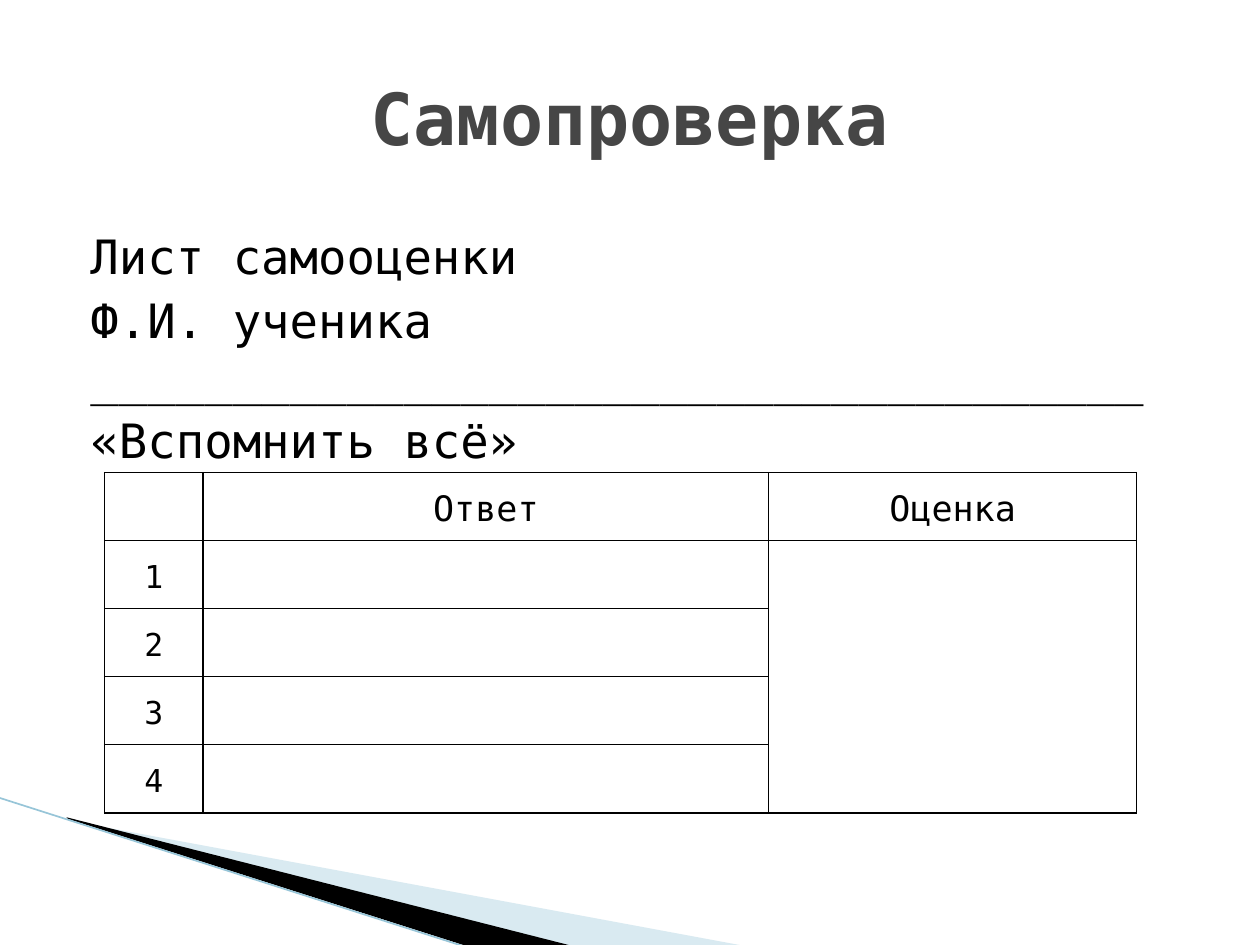
from dataclasses import dataclass
from pptx import Presentation
from pptx.dml.color import RGBColor
from pptx.enum.shapes import MSO_CONNECTOR
from pptx.enum.text import MSO_ANCHOR, PP_ALIGN
from pptx.oxml import parse_xml
from pptx.oxml.ns import nsdecls, qn
from pptx.util import Pt
from lxml.etree import SubElement

# Content
TITLE = "Самопроверка"
LINES = ["Лист самооценки", "Ф.И. ученика " + "_" * 37, "«Вспомнить всё»"]
HEAD = ["", "Ответ", "Оценка"]
TASKS = ["1", "2", "3", "4"]
COLS = [56.2, 323.3, 210.2]
ROW = 38.9

# Corner wedges: points, colour, opacity in percent
WEDGES = [
    ([(39.6, 468.7), (428.4, 540.7), (328.3, 540.7), (39.6, 468)], "pale", 40),
    ([(38.2, 467.3), (329, 540.7), (267.8, 541.4), (38.9, 468)], "ink", 100),
]
EDGE = (-0.7, 455.8, 267.1, 541.4)


@dataclass
class Theme:
    font: str = "DejaVu Sans Mono"
    ink: str = "000000"
    title: str = "464646"
    pale: str = "A0CBDC"
    edge: str = "97C5D8"
    big: int = 41
    body: int = 27
    head: int = 20
    cell: int = 18


T = Theme()


def rgb(name):
    return RGBColor.from_string(getattr(T, name))


def write(frame, lines, size, color="ink", bold=False, align=PP_ALIGN.LEFT,
          anchor=MSO_ANCHOR.TOP, indent=0, before=0, spacing=None):
    frame.word_wrap = True
    frame.vertical_anchor = anchor
    for i, line in enumerate(lines):
        para = frame.paragraphs[0] if i == 0 else frame.add_paragraph()
        para.alignment = align
        if indent:
            props = para._p.get_or_add_pPr()
            props.set("marL", str(Pt(indent)))
            props.set("indent", "0")
        if i and before:
            para.space_before = Pt(before)
        if spacing:
            para.line_spacing = spacing
        run = para.add_run()
        run.text = line
        run.font.name, run.font.size, run.font.bold = T.font, Pt(size), bold
        run.font.color.rgb = rgb(color)


def border(cell):
    props = cell._tc.get_or_add_tcPr()
    for i, side in enumerate(("lnL", "lnR", "lnT", "lnB")):
        props.insert(i, parse_xml(
            f'<a:{side} {nsdecls("a")} w="{Pt(1)}"><a:solidFill>'
            f'<a:srgbClr val="{T.ink}"/></a:solidFill></a:{side}>'))


def wedge(shapes, points, color, alpha):
    build = shapes.build_freeform(*points[0], scale=Pt(1))
    build.add_line_segments(points[1:], close=True)
    shape = build.convert_to_shape()
    shape.shadow.inherit = False
    shape.fill.solid()
    shape.fill.fore_color.rgb = rgb(color)
    shape.line.fill.background()
    if alpha < 100:
        tint = shape._element.spPr.find(".//" + qn("a:srgbClr"))
        SubElement(tint, qn("a:alpha")).set("val", str(alpha * 1000))


def grid(shapes):
    rows = [HEAD] + [[task, "", ""] for task in TASKS]
    table = shapes.add_table(len(rows), len(COLS), Pt(59.8), Pt(270),
                             Pt(sum(COLS)), Pt(ROW * len(rows))).table
    table.first_row = table.horz_banding = False
    for col, width in zip(table.columns, COLS):
        col.width = Pt(width)
    for r, row in enumerate(rows):
        table.rows[r].height = Pt(ROW)
        for c, text in enumerate(row):
            cell = table.cell(r, c)
            cell.fill.background()
            border(cell)
            cell.margin_left = cell.margin_right = Pt(5)
            cell.margin_top = cell.margin_bottom = 0
            cell.vertical_anchor = MSO_ANCHOR.MIDDLE
            if text:
                write(cell.text_frame, [text], T.cell if r else T.head,
                      align=PP_ALIGN.CENTER, anchor=None, spacing=1.15)
    table.cell(1, 2).merge(table.cell(len(TASKS), 2))


def main():
    deck = Presentation()
    deck.slide_width, deck.slide_height = Pt(720), Pt(540)
    shapes = deck.slides.add_slide(deck.slide_layouts[6]).shapes

    # Corner decoration
    for item in WEDGES:
        wedge(shapes, *item)
    edge = shapes.add_connector(MSO_CONNECTOR.STRAIGHT, *map(Pt, EDGE))
    edge.line.color.rgb = rgb("edge")
    edge.line.width = Pt(0.95)
    SubElement(edge._element.spPr, qn("a:effectLst"))

    # Heading and form lines
    body = shapes.add_textbox(Pt(36), Pt(126.4), Pt(648), Pt(140))
    write(body.text_frame, LINES, T.body, indent=8.64, before=4)
    title = shapes.add_textbox(Pt(36), Pt(21.6), Pt(648), Pt(90))
    write(title.text_frame, [TITLE], T.big, color="title", bold=True,
          align=PP_ALIGN.CENTER, anchor=MSO_ANCHOR.MIDDLE)

    # Score table
    grid(shapes)
    deck.save("out.pptx")


if __name__ == "__main__":
    main()
